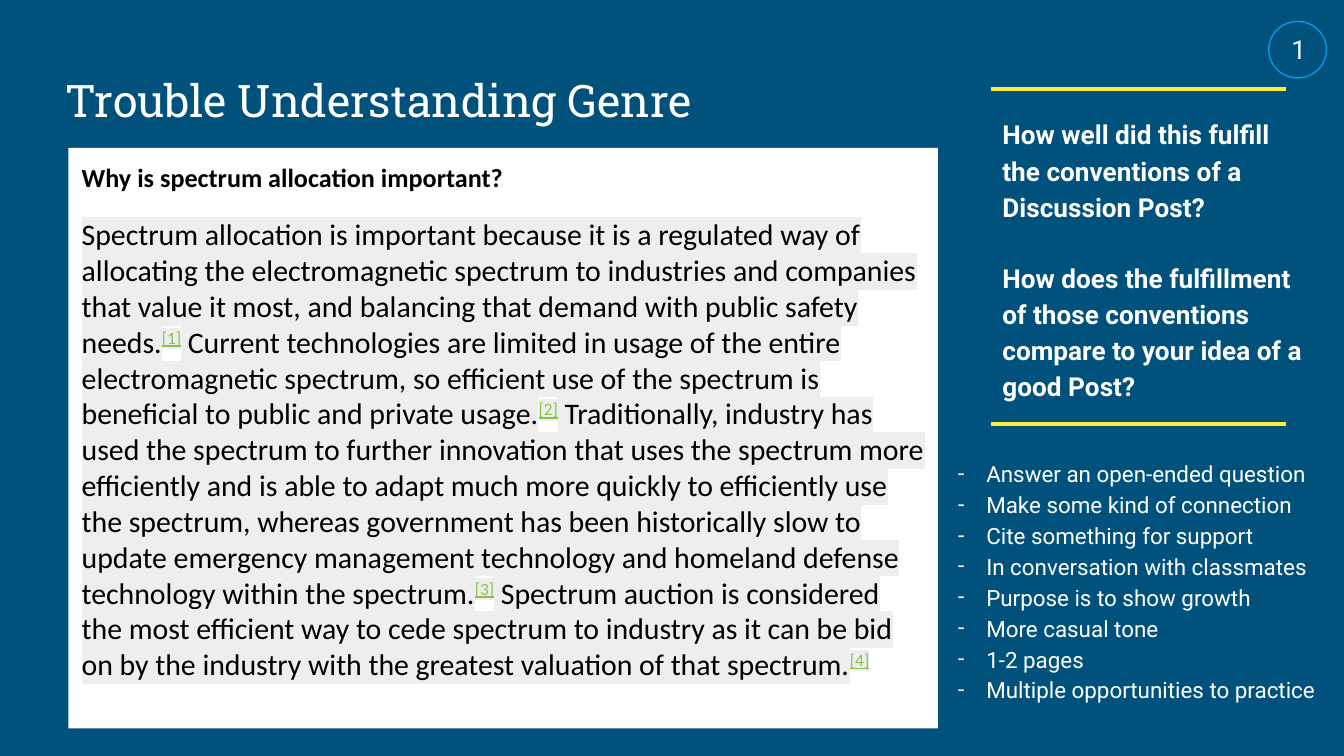
from dataclasses import dataclass

from lxml import etree
from pptx import Presentation
from pptx.dml.color import RGBColor
from pptx.enum.shapes import MSO_CONNECTOR, MSO_SHAPE
from pptx.enum.text import MSO_ANCHOR, PP_ALIGN
from pptx.oxml.ns import qn
from pptx.util import Emu, Pt

RECTANGLE = MSO_SHAPE.RECTANGLE
OVAL = MSO_SHAPE.OVAL
STRAIGHT = MSO_CONNECTOR.STRAIGHT
TOP = MSO_ANCHOR.TOP
BOTTOM = MSO_ANCHOR.BOTTOM
LEFT = PP_ALIGN.LEFT
PX = 4572


@dataclass(frozen=True)
class Theme:
    background: str = "00517C"
    white: str = "FFFFFF"
    black: str = "000000"
    highlight: str = "EEEEEE"
    citation: str = "8BC34A"
    rule: str = "FFEB38"
    badge: str = "039BE5"
    title_font: str = "Roboto Slab"
    text_font: str = "Roboto"
    post_font: str = "Calibri"
    title_size: int = 24
    post_size: int = 16
    heading_size: int = 14
    list_size: int = 12
    rule_width: float = 2.25
    badge_width: float = 0.75


def px(value):
    return Emu(value * PX)


def color(value):
    return RGBColor.from_string(value)


def add_color(parent, tag, value):
    holder = etree.SubElement(parent, qn(tag))
    etree.SubElement(holder, qn("a:srgbClr"), val=value)
    return holder


class SlideBuilder:
    def __init__(self, deck, theme):
        self.theme = theme
        self.page = deck.slides.add_slide(deck.slide_layouts[6])
        fill = self.page.background.fill
        fill.solid()
        fill.fore_color.rgb = color(theme.background)

    def text_box(self, left, top, width, height, anchor=TOP):
        box = self.page.shapes.add_textbox(px(left), px(top), px(width), px(height))
        return self.frame(box, anchor)

    def panel(self, left, top, width, height, fill):
        panel = self.page.shapes.add_shape(
            RECTANGLE, px(left), px(top), px(width), px(height))
        panel.shadow.inherit = False
        panel.fill.solid()
        panel.fill.fore_color.rgb = color(fill)
        panel.line.fill.background()
        return self.frame(panel, TOP)

    def frame(self, shape, anchor):
        frame = shape.text_frame
        settings = {"word_wrap": True, "vertical_anchor": anchor}
        for side in ("left", "top", "right", "bottom"):
            settings[f"margin_{side}"] = px(20)
        for name, value in settings.items():
            setattr(frame, name, value)
        return frame

    def paragraph(self, frame, **settings):
        first = frame.paragraphs[0]
        para = frame.add_paragraph() if first.runs else first
        settings = {"alignment": LEFT, **settings}
        for name, value in settings.items():
            setattr(para, name, value)
        return para

    def span(self, para, text, ink, highlight=None, raised=False, **settings):
        run = para.add_run()
        run.text = text
        for name, value in settings.items():
            setattr(run.font, name, value)
        run.font.color.rgb = color(ink)
        properties = run.font._element
        if highlight:
            mark = add_color(properties, "a:highlight", highlight)
            properties.find(qn("a:latin")).addprevious(mark)
        if raised:
            properties.set("baseline", "30000")

    def bullet(self, para, mark, ink):
        properties = para._p.get_or_add_pPr()
        properties.set("marL", str(px(100)))
        properties.set("indent", str(px(-42)))
        add_color(properties, "a:buClr", ink)
        etree.SubElement(properties, qn("a:buFont"), typeface=self.theme.text_font)
        etree.SubElement(properties, qn("a:buChar"), char=mark)

    def rule(self, left, right, y):
        rule = self.page.shapes.add_connector(
            STRAIGHT, px(left), px(y), px(right), px(y))
        rule.line.color.rgb = color(self.theme.rule)
        rule.line.width = Pt(self.theme.rule_width)
        etree.SubElement(rule._element.spPr, qn("a:effectLst"))

    def ring(self, left, top, width, height):
        ring = self.page.shapes.add_shape(
            OVAL, px(left), px(top), px(width), px(height))
        ring.shadow.inherit = False
        ring.fill.background()
        ring.line.color.rgb = color(self.theme.badge)
        ring.line.width = Pt(self.theme.badge_width)


HEADING = "Why is spectrum allocation important?"
POST = [
    "Spectrum allocation is important because it is a regulated way of allocating "
    "the electromagnetic spectrum to industries and companies that value it most, "
    "and balancing that demand with public safety needs.",
    " Current technologies are limited in usage of the entire electromagnetic "
    "spectrum, so efficient use of the spectrum is beneficial to public and "
    "private usage.",
    " Traditionally, industry has used the spectrum to further innovation that uses "
    "the spectrum more efficiently and is able to adapt much more quickly to "
    "efficiently use the spectrum, whereas government has been historically slow to "
    "update emergency management technology and homeland defense technology within "
    "the spectrum.",
    " Spectrum auction is considered the most efficient way to cede spectrum to "
    "industry as it can be bid on by the industry with the greatest valuation of "
    "that spectrum.",
]
QUESTIONS = [
    "How well did this fulfill the conventions of a Discussion Post?",
    "How does the fulfillment of those conventions compare to your idea of a good Post?",
]
CONVENTIONS = [
    "Answer an open-ended question",
    "Make some kind of connection",
    "Cite something for support",
    "In conversation with classmates",
    "Purpose is to show growth",
    "More casual tone",
    "1-2 pages",
    "Multiple opportunities to practice",
]


def main():
    deck = Presentation()
    deck.slide_width, deck.slide_height = px(2000), px(1125)
    theme = Theme()
    slide = SlideBuilder(deck, theme)
    heading = {"size": Pt(theme.heading_size), "name": theme.text_font}

    title = slide.text_box(78, 58, 1136, 150, BOTTOM)
    slide.span(slide.paragraph(title), "Trouble Understanding Genre", theme.white,
               size=Pt(theme.title_size), name=theme.title_font)

    post = slide.panel(102, 220, 1294, 864, theme.white)
    slide.span(slide.paragraph(post, space_after=Pt(12.5)), HEADING, theme.black,
               size=Pt(theme.heading_size), name=theme.post_font, bold=True)
    body = slide.paragraph(post)
    style = {"size": Pt(theme.post_size), "name": theme.post_font,
             "highlight": theme.highlight}
    for number, passage in enumerate(POST, 1):
        slide.span(body, passage, theme.black, **style)
        slide.span(body, f"[{number}]", theme.citation, raised=True,
                   underline=True, **style)

    questions = slide.text_box(1472, 150, 502, 466)
    for index, question in enumerate(QUESTIONS):
        para = slide.paragraph(questions, line_spacing=1.15,
                               space_before=Pt(19 * index))
        slide.span(para, question, theme.white, bold=True, **heading)

    conventions = slide.text_box(1348, 659, 642, 426)
    for convention in CONVENTIONS:
        para = slide.paragraph(conventions, line_spacing=1.15)
        slide.bullet(para, "-", theme.white)
        slide.span(para, convention, theme.white,
                   size=Pt(theme.list_size), name=theme.text_font)

    for y in (631, 132):
        slide.rule(1475, 1914, y)

    badge = slide.text_box(1902, 30, 58, 88)
    slide.span(slide.paragraph(badge), "1", theme.white, **heading)
    slide.ring(1888, 32, 86, 84)

    deck.save("out.pptx")


if __name__ == "__main__":
    main()
